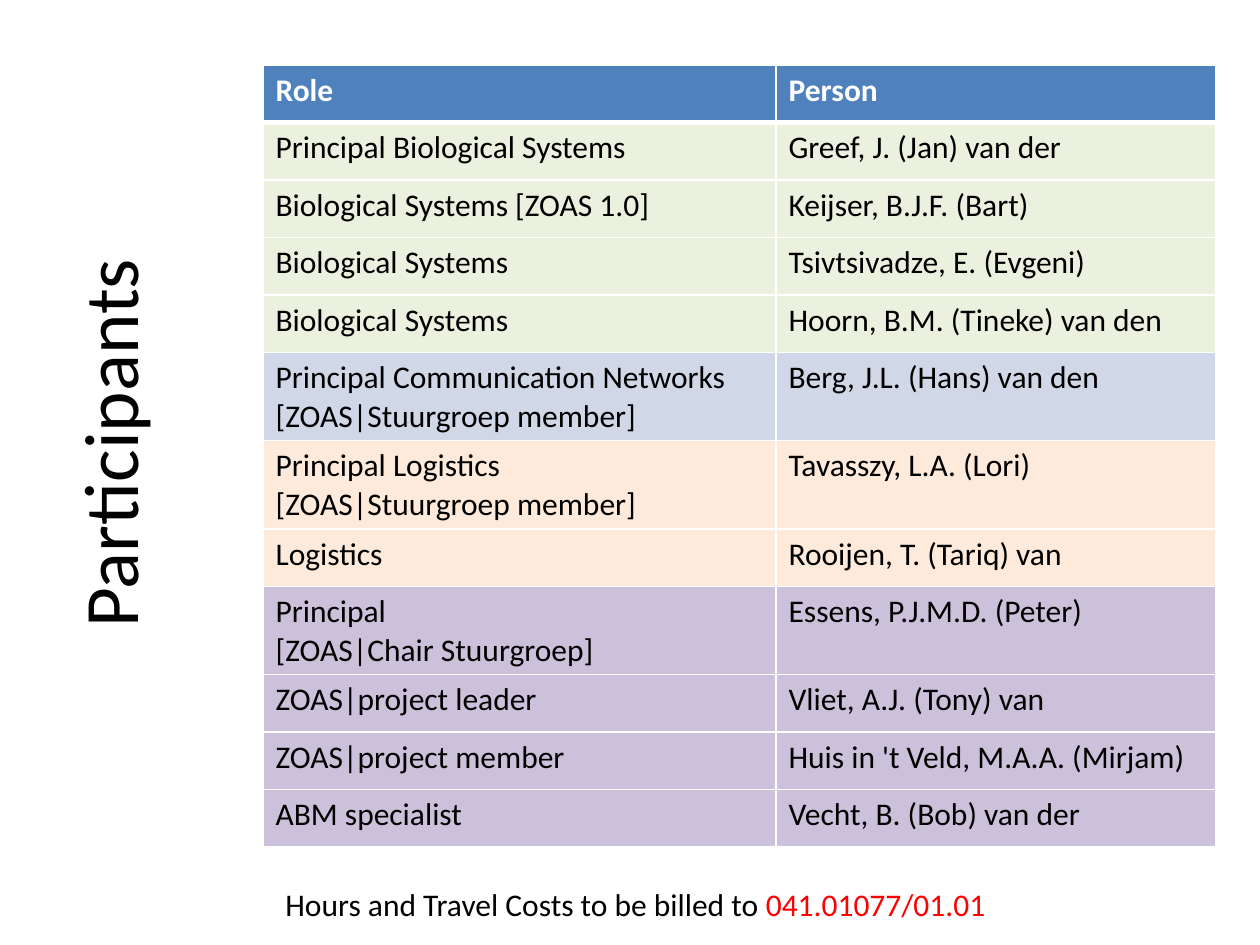
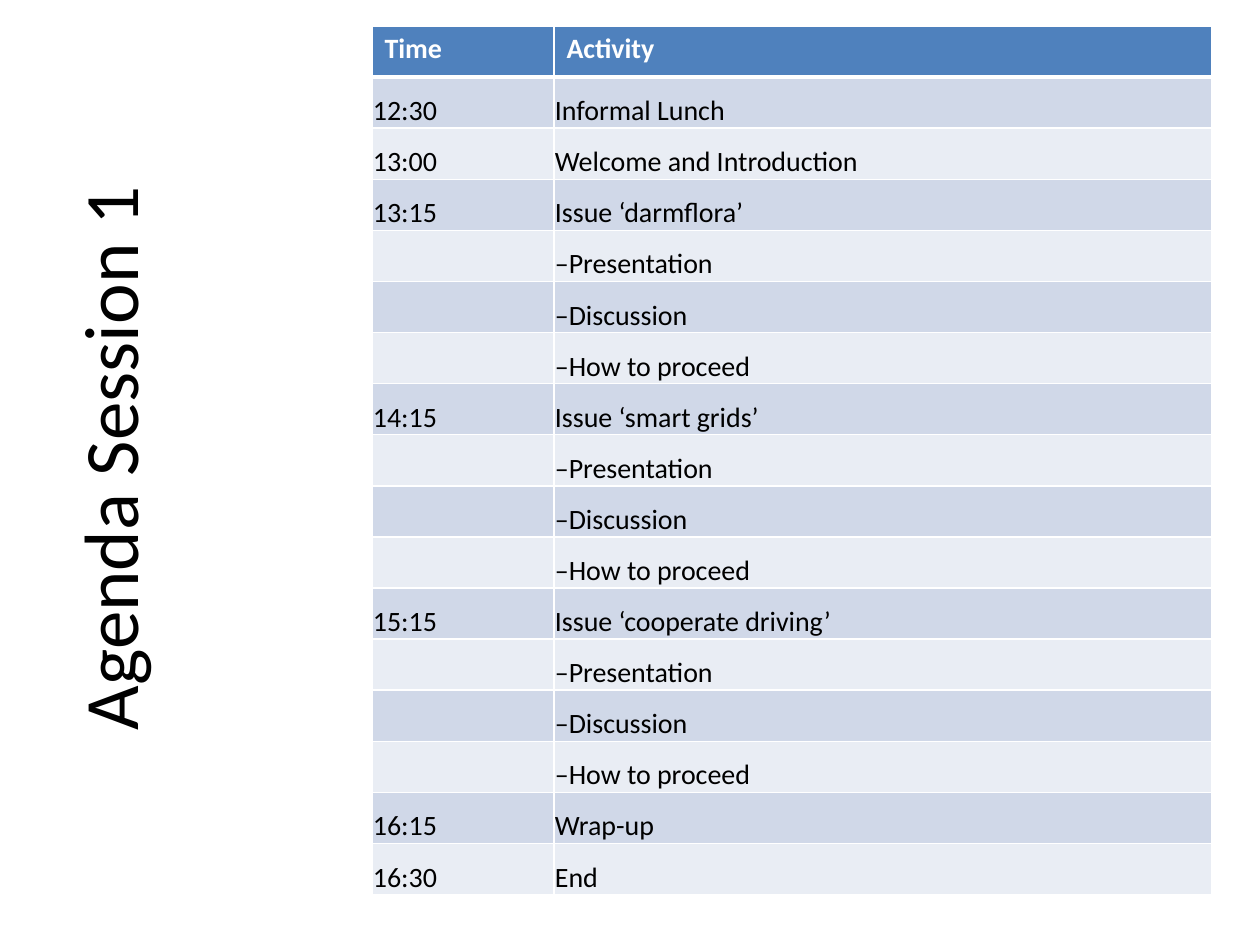
from lxml.etree import SubElement
from pptx import Presentation
from pptx.dml.color import RGBColor
from pptx.enum.text import MSO_ANCHOR, PP_ALIGN
from pptx.oxml.ns import qn
from pptx.util import Emu, Pt

PX_PER_INCH = 126
FONT = "Calibri"
BLACK = RGBColor(0x00, 0x00, 0x00)
WHITE = RGBColor(0xFF, 0xFF, 0xFF)
RED = RGBColor(0xFF, 0x00, 0x00)
HEADER_BLUE = RGBColor(0x4F, 0x81, 0xBD)
BAND_DARK = RGBColor(0xD0, 0xD8, 0xE8)
BAND_LIGHT = RGBColor(0xE9, 0xED, 0xF4)
BIOLOGY_GREEN = RGBColor(0xEB, 0xF1, 0xDE)
NETWORKS_BLUE = BAND_DARK
LOGISTICS_ORANGE = RGBColor(0xFD, 0xEA, 0xDA)
PROJECT_PURPLE = RGBColor(0xCC, 0xC1, 0xDA)

PARTICIPANTS = [
    ("Principal Biological Systems", "Greef, J. (Jan) van der", BIOLOGY_GREEN),
    ("Biological Systems [ZOAS 1.0]", "Keijser, B.J.F. (Bart)", BIOLOGY_GREEN),
    ("Biological Systems", "Tsivtsivadze, E. (Evgeni)", BIOLOGY_GREEN),
    ("Biological Systems", "Hoorn, B.M. (Tineke) van den", BIOLOGY_GREEN),
    ("Principal Communication Networks [ZOAS|Stuurgroep member]",
     "Berg, J.L. (Hans) van den", NETWORKS_BLUE),
    ("Principal Logistics \v[ZOAS|Stuurgroep member]", "Tavasszy, L.A. (Lori)", LOGISTICS_ORANGE),
    ("Logistics", "Rooijen, T. (Tariq) van", LOGISTICS_ORANGE),
    ("Principal\n[ZOAS|Chair Stuurgroep]", "Essens, P.J.M.D. (Peter)", PROJECT_PURPLE),
    ("ZOAS|project leader", "Vliet, A.J. (Tony) van", PROJECT_PURPLE),
    ("ZOAS|project member", "Huis in 't Veld, M.A.A. (Mirjam)", PROJECT_PURPLE),
    ("ABM specialist", "Vecht, B. (Bob) van der", PROJECT_PURPLE),
]
ISSUES = [("13:15", "darmflora"), ("14:15", "smart grids"), ("15:15", "cooperate driving")]
ISSUE_STEPS = ["Presentation", "Discussion", "How to proceed"]


def px(length):
    return Emu(round(length * 914400 / PX_PER_INCH))


def format_runs(paragraph, size, color, bold=False):
    for run in paragraph.runs:
        run.font.name = FONT
        run.font.size = Pt(size)
        run.font.bold = bold
        run.font.color.rgb = color


def add_titled_slide(presentation, title_text, box, wrap):
    """Add a slide whose title reads upwards; box is the title before rotation."""
    slide = presentation.slides.add_slide(presentation.slide_layouts[5])
    title = slide.shapes.title
    title.left, title.top, title.width, title.height = map(px, box)
    title.rotation = 270
    frame = title.text_frame
    frame.text = title_text
    frame.word_wrap = wrap
    frame.vertical_anchor = MSO_ANCHOR.MIDDLE
    frame.paragraphs[0].alignment = PP_ALIGN.CENTER
    format_runs(frame.paragraphs[0], 44, BLACK)
    return slide


def add_border(cell, side, width):
    properties = cell._tc.get_or_add_tcPr()
    line = SubElement(properties, qn(f"a:ln{side}"), w=str(Pt(width)))
    fill = SubElement(line, qn("a:solidFill"))
    SubElement(fill, qn("a:srgbClr"), val=str(WHITE))


def style_cell(cell, row, text, size, fill):
    """Fill one cell; row 0 is the header, with a thick rule beneath it."""
    for side in "LRTB":
        under_header = (row, side) in [(0, "B"), (1, "T")]
        add_border(cell, side, 3 if under_header else 1)
    cell.fill.solid()
    cell.fill.fore_color.rgb = fill
    cell.margin_bottom = px(5)
    cell.text_frame.text = text
    for paragraph in cell.text_frame.paragraphs:
        format_runs(paragraph, size, BLACK if row else WHITE, bold=row == 0)


def add_grid(slide, left, top, column_widths, height, size, header, rows):
    """Add a table; each of rows is (first text, second text, fill)."""
    lines = [(*header, HEADER_BLUE), *rows]
    table = slide.shapes.add_table(len(lines), len(header), px(left), px(top),
                                   px(sum(column_widths)), px(height)).table
    for column, width in zip(table.columns, column_widths):
        column.width = px(width)
    for row, (*texts, fill) in enumerate(lines):
        table.rows[row].height = px(height / len(lines))
        for column, text in enumerate(texts):
            style_cell(table.cell(row, column), row, text, size, fill)
    return table


def add_dash_bullet(paragraph):
    properties = paragraph._p.get_or_add_pPr()
    properties.set("marL", "0")
    properties.set("indent", "0")
    color = SubElement(properties, qn("a:buClr"))
    SubElement(color, qn("a:srgbClr"), val=str(BLACK))
    SubElement(properties, qn("a:buFont"), typeface=FONT)
    SubElement(properties, qn("a:buChar"), char="–")


def add_billing_note(slide, left, top, width, height):
    box = slide.shapes.add_textbox(px(left), px(top), px(width), px(height))
    box.text_frame.word_wrap = True
    paragraph = box.text_frame.paragraphs[0]
    for text in ("Hours and Travel Costs to be billed to ", "041.01077/01.01"):
        paragraph.add_run().text = text
    format_runs(paragraph, 18, BLACK)
    paragraph.runs[1].font.color.rgb = RED


def build_participants(presentation):
    slide = add_titled_slide(presentation, "Participants", (-91, 390, 398, 106), wrap=False)
    add_grid(slide, 263, 65, (513, 440), 690, 18, ("Role", "Person"), PARTICIPANTS)
    add_billing_note(slide, 273, 879, 863, 50)


def agenda_entries():
    entries = [("12:30", "Informal Lunch"), ("13:00", "Welcome and Introduction")]
    for time, issue in ISSUES:
        entries.append((time, f"Issue ‘{issue}’"))
        entries += [("", step) for step in ISSUE_STEPS]
    return entries + [("16:15", "Wrap-up"), ("16:30", "End")]


def build_agenda(presentation):
    slide = add_titled_slide(presentation, "Agenda Session 1", (-235, 395, 685, 127), wrap=True)
    rows = [(time, activity, BAND_LIGHT if index % 2 else BAND_DARK)
            for index, (time, activity) in enumerate(agenda_entries())]
    table = add_grid(slide, 372, 26, (182, 658), 869, 16, ("Time", "Activity"), rows)
    for row, (time, _, _) in enumerate(rows, start=1):
        for column in range(2):
            cell = table.cell(row, column)
            cell.vertical_anchor = MSO_ANCHOR.BOTTOM
            cell.margin_left = cell.margin_right = cell.margin_top = px(1)
            cell.margin_bottom = 0
        if not time:
            add_dash_bullet(table.cell(row, 1).text_frame.paragraphs[0])


def main():
    presentation = Presentation()
    presentation.slide_width = px(1260)
    presentation.slide_height = px(945)
    build_participants(presentation)
    build_agenda(presentation)
    presentation.save("out.pptx")


if __name__ == "__main__":
    main()
